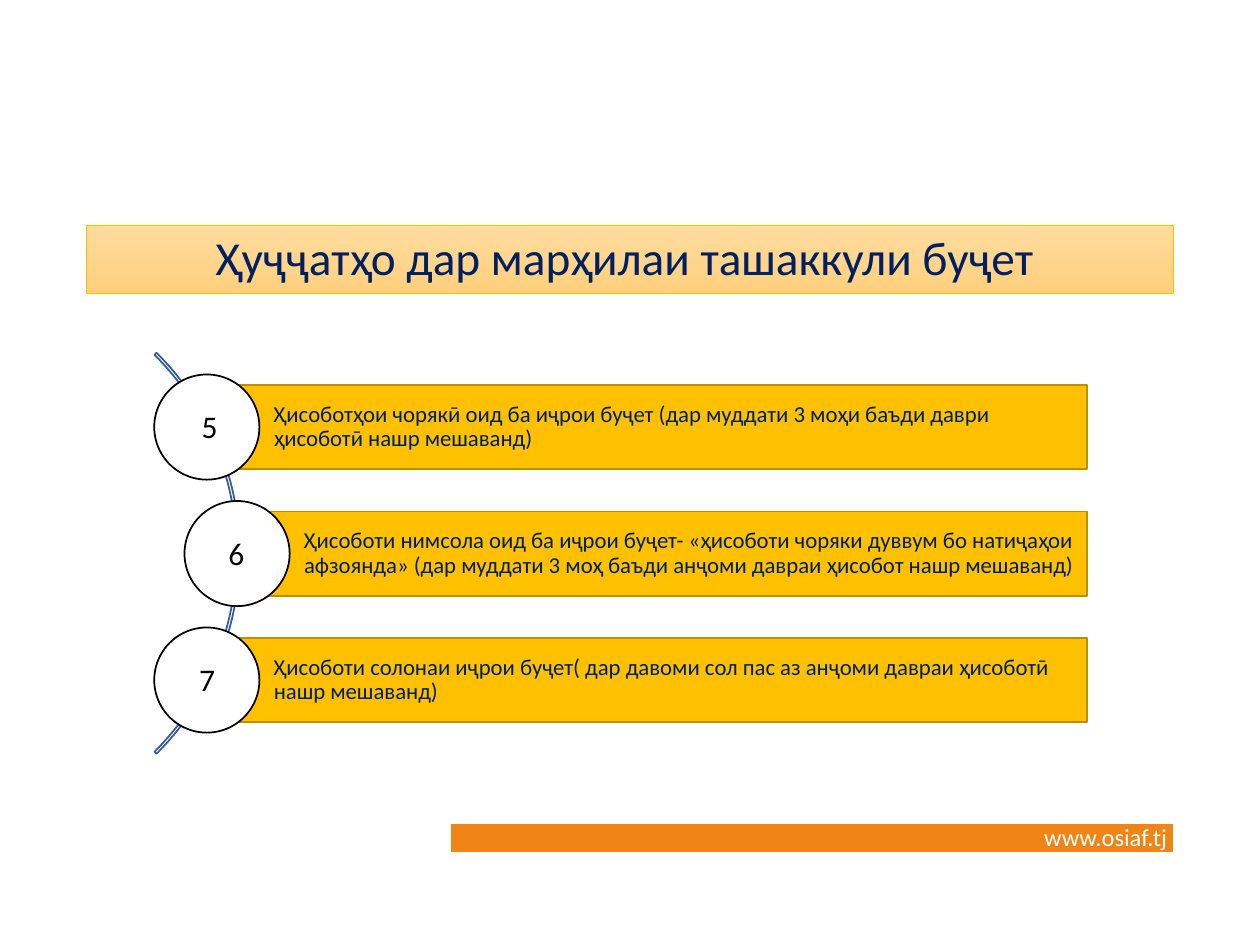
"""Build the slide on documents of the budget stage."""
from lxml import etree
from pptx import Presentation
from pptx import util as u
from pptx.dml.color import RGBColor
from pptx.enum import shapes, text
from pptx.oxml.ns import qn


def rgb(value):
    return RGBColor.from_string(value)


def add_run(tf, value, size, colour, align, spacing=1.0):
    tf.word_wrap = True
    tf.auto_size = text.MSO_AUTO_SIZE.NONE
    tf.vertical_anchor = text.MSO_ANCHOR.MIDDLE
    p = tf.paragraphs[0]
    p.alignment = align
    p.line_spacing = spacing
    r = p.add_run()
    r.text = value
    r.font.size = u.Pt(size)
    r.font.name = "Calibri"
    r.font.color.rgb = rgb(colour)


LEFT, CENTER = text.PP_ALIGN.LEFT, text.PP_ALIGN.CENTER
SHAPE = shapes.MSO_SHAPE

prs = Presentation()
prs.slide_width, prs.slide_height = u.Cm(25.4), u.Cm(19.05)
s = prs.slides.add_slide(prs.slide_layouts[5])

footer = s.shapes.add_connector(
    shapes.MSO_CONNECTOR.STRAIGHT, u.Cm(9.09), u.Cm(16.89), u.Cm(23.65), u.Cm(16.89))
footer.line.color.rgb = rgb("F08416")
footer.line.width = u.Pt(16)
etree.SubElement(footer._element.spPr, qn("a:effectLst"))
site = s.shapes.add_textbox(u.Cm(20.8), u.Cm(16.43), u.Cm(4.04), u.Cm(0.86))
add_run(site.text_frame, "www.osiaf.tj", 14, "FFFFFF", LEFT)

title = s.shapes.title
title.left, title.top, title.width, title.height = u.Cm(1.75), u.Cm(4.55), u.Cm(21.9), u.Cm(1.37)
title.fill.gradient()
title.fill.gradient_angle = 270
for stop, colour in zip(title.fill.gradient_stops, ("FFDB9E", "FFD07C")):
    stop.color.rgb = rgb(colour)
title.line.color.rgb = rgb("FFC000")
title.line.width = u.Pt(0.5)
add_run(title.text_frame, "Ҳуҷҷатҳо дар марҳилаи ташаккули буҷет ", 27, "002060", CENTER, 0.9)

arc = s.shapes.add_shape(SHAPE.BLOCK_ARC, u.Cm(-6.6), u.Cm(5.44), u.Cm(11.43), u.Cm(11.43))
arc.shadow.inherit = False
for i, value in enumerate((189, 27, 0.005)):
    arc.adjustments[i] = value
arc.fill.background()
arc.line.color.rgb = rgb("365B9D")
arc.line.width = u.Pt(1)

reports = [
    ("5", 4.17, 3.5, "Ҳисоботҳои чорякӣ оид ба иҷрои буҷет (дар муддати 3 моҳи баъди даври "
     "ҳисоботӣ нашр мешаванд)"),
    ("6", 4.78, 4.04, "Ҳисоботи нимсола оид ба иҷрои буҷет- «ҳисоботи чоряки дуввум бо натиҷаҳои "
     "афзоянда» (дар муддати 3 моҳ баъди анҷоми давраи ҳисобот нашр мешаванд)"),
    ("7", 4.17, 3.45, "Ҳисоботи солонаи иҷрои буҷет( дар давоми сол пас аз анҷоми давраи ҳисоботӣ "
     "нашр мешаванд)"),
]
for i, (number, left, number_left, report) in enumerate(reports):
    top = 7.76 + 2.55 * i
    bar = s.shapes.add_shape(SHAPE.RECTANGLE, u.Cm(left), u.Cm(top), u.Cm(21.92 - left), u.Cm(1.7))
    circle = s.shapes.add_shape(SHAPE.OVAL, u.Cm(left - 1.06), u.Cm(top - 0.21), u.Cm(2.12), u.Cm(2.12))
    label = s.shapes.add_shape(
        SHAPE.RECTANGLE, u.Cm(number_left), u.Cm(top + 0.16), u.Cm(1.45), u.Cm(1.35))
    for sp, fill, line in ((bar, "FFC000", "BD8E00"), (circle, "FFFFFF", "000000"), (label, "FFFFFF", None)):
        sp.shadow.inherit = False
        sp.fill.solid()
        sp.fill.fore_color.rgb = rgb(fill)
        if line:
            sp.line.color.rgb = rgb(line)
            sp.line.width = u.Pt(1)
        else:
            sp.line.fill.background()
    tf = bar.text_frame
    tf.margin_left = u.Cm(1.35)
    tf.margin_right = tf.margin_top = tf.margin_bottom = u.Cm(0.1)
    add_run(tf, report, 13, "002060", LEFT, 0.9)
    add_run(label.text_frame, number, 18, "000000", CENTER)

prs.save("out.pptx")
